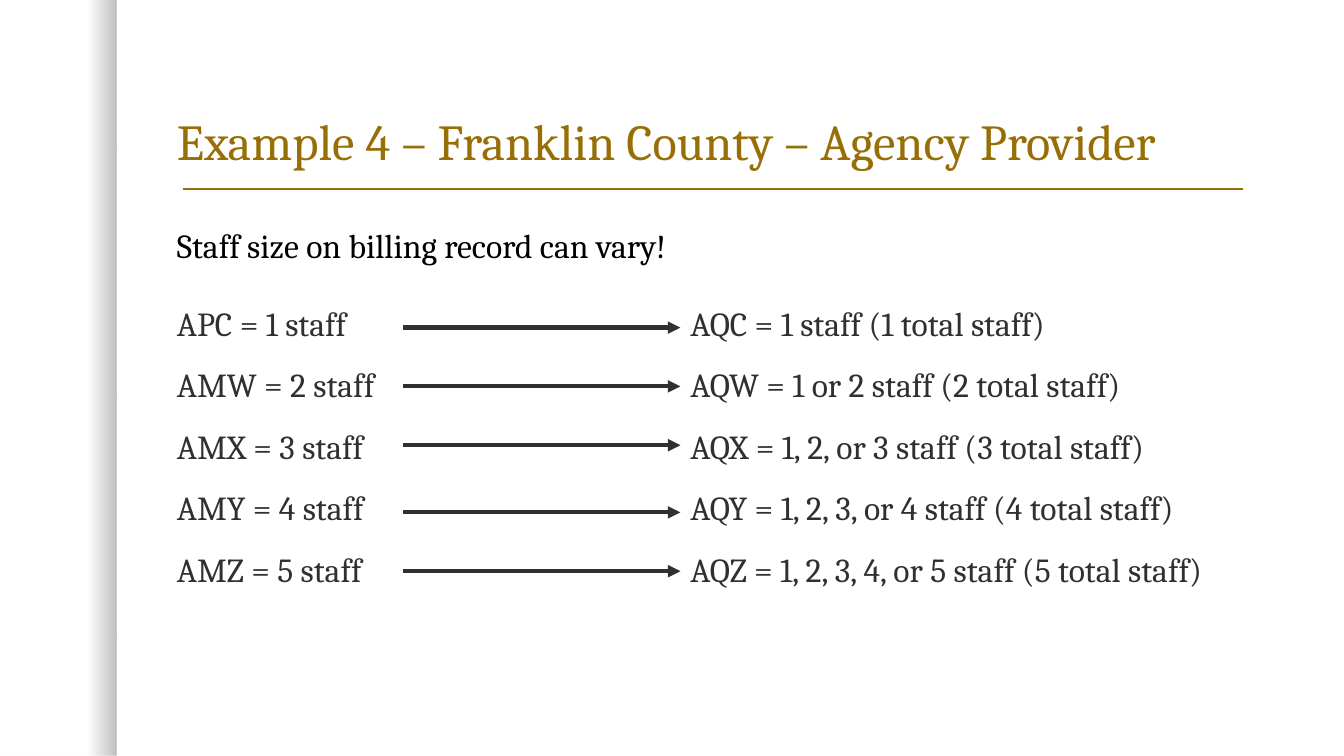
from lxml import etree
from pptx import Presentation
from pptx import util as u
from pptx.dml.color import RGBColor
from pptx.enum import shapes, text
from pptx.oxml.ns import qn

PX = 9525  # EMU per px, 96 px to the inch
COLORS = {"gold": "986F07", "dark": "303030", "black": "000000"}

prs = Presentation()
prs.slide_width, prs.slide_height = 1280 * PX, 720 * PX
s = prs.slides.add_slide(prs.slide_layouts[6])


def add_text(lines, x, y, w, h, size=24, color="dark", anchor="TOP", gap=18):
    tf = s.shapes.add_textbox(x * PX, y * PX, w * PX, h * PX).text_frame
    tf.word_wrap = True
    tf.vertical_anchor = text.MSO_ANCHOR[anchor]
    for i, line in enumerate(lines):
        p = tf.add_paragraph() if i else tf.paragraphs[0]
        p.line_spacing = 0.9
        p.space_before = u.Pt(gap if i else 0)
        r = p.add_run()
        r.text = line
        r.font.name, r.font.size = "Cambria", u.Pt(size)
        r.font.color.rgb = RGBColor.from_string(COLORS[color])


def add_line(x1, x2, y, color, width, arrow=False):
    line = s.shapes.add_connector(shapes.MSO_CONNECTOR.STRAIGHT, x1 * PX, y * PX, x2 * PX, y * PX)
    line.line.color.rgb = RGBColor.from_string(COLORS[color])
    line.line.width = u.Pt(width)
    if arrow:
        etree.SubElement(line.line._get_or_add_ln(), qn("a:tailEnd"), type="triangle")
    etree.SubElement(line._element.spPr, qn("a:effectLst"))


# Shaded band on the left edge
band = s.shapes.add_shape(shapes.MSO_SHAPE.RECTANGLE, 0, 0, 111 * PX, 720 * PX)
band.shadow.inherit = False
band.line.fill.background()
band.fill.gradient()
band.fill.gradient_angle = 0
for stop, position, alpha in zip(band.fill.gradient_stops, (0.75, 1), (0, 25000)):
    stop.position = position
    stop.color.rgb = RGBColor.from_string(COLORS["black"])
for clr, alpha in zip(band._element.spPr.iter(qn("a:srgbClr")), (0, 25000)):
    etree.SubElement(clr, qn("a:alpha"), val=str(alpha))

# Title, rule and lead sentence
add_line(174, 1184, 180, "gold", 1)
add_text(["Example 4 – Franklin County – Agency Provider"], 159, 40, 1032, 128,
         size=36, color="gold", anchor="BOTTOM")
add_text(["Staff size on billing record can vary!"], 159, 192, 1032, 88,
         color="black", anchor="MIDDLE")

# Staff codes: left code, arrow height, right code
rows = [
    ("APC = 1 staff", 312, "AQC = 1 staff (1 total staff)"),
    ("AMW = 2 staff", 368, "AQW = 1 or 2 staff (2 total staff)"),
    ("AMX = 3 staff", 424, "AQX = 1, 2, or 3 staff (3 total staff)"),
    ("AMY = 4 staff", 488, "AQY = 1, 2, 3, or 4 staff (4 total staff)"),
    ("AMZ = 5 staff", 544, "AQZ = 1, 2, 3, 4, or 5 staff (5 total staff)"),
]
add_text([left for left, _, _ in rows], 159, 288, 504, 360)
add_text([right for _, _, right in rows], 648, 288, 544, 360)
for _, y, _ in rows:
    add_line(384, 648, y, "dark", 3, arrow=True)

prs.save("out.pptx")
